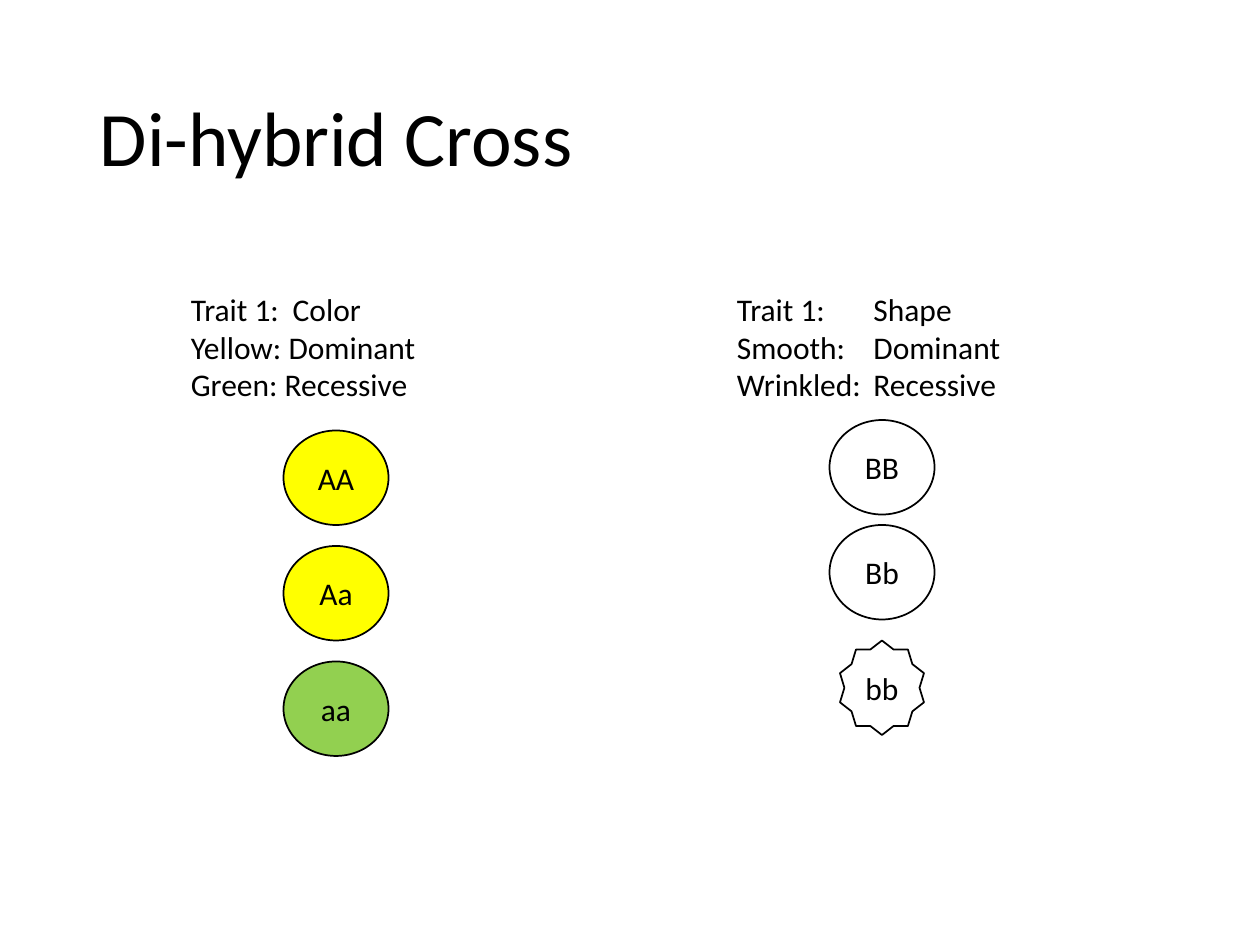
import dataclasses

import pptx
import pptx.dml.color
import pptx.enum.shapes
import pptx.enum.text
import pptx.oxml
import pptx.oxml.ns
import pptx.util

EMU_PER_PX = 7620
SHAPES = pptx.enum.shapes.MSO_SHAPE
ANCHOR = pptx.enum.text.MSO_ANCHOR
ALIGN = pptx.enum.text.PP_ALIGN


@dataclasses.dataclass(frozen=True)
class Theme:
    font: str = "Calibri"
    title_size: int = 44
    body_size: int = 18
    line_width: int = 1
    ink: str = "000000"
    white: str = "FFFFFF"
    yellow: str = "FFFF00"
    green: str = "92D050"


THEME = Theme()


def px(length):
    return pptx.util.Emu(length * EMU_PER_PX)


def rgb(value):
    return pptx.dml.color.RGBColor.from_string(value)


def add_run(paragraph, text, size):
    run = paragraph.add_run()
    run.text = text
    run.font.name = THEME.font
    run.font.size = pptx.util.Pt(size)
    run.font.color.rgb = rgb(THEME.ink)


def add_tab_stop(paragraph, position):
    properties = paragraph._p.get_or_add_pPr()
    tab_list = pptx.oxml.parse_xml(
        f'<a:tabLst {pptx.oxml.ns.nsdecls("a")}>'
        f'<a:tab pos="{px(position)}" algn="l"/></a:tabLst>'
    )
    properties.append(tab_list)


def set_title(slide, text):
    title = slide.shapes.title
    title.left, title.top = px(83), px(48)
    title.width, title.height = px(1034), px(174)
    frame = title.text_frame
    frame.word_wrap = True
    frame.vertical_anchor = ANCHOR.MIDDLE
    paragraph = frame.paragraphs[0]
    paragraph.alignment = ALIGN.LEFT
    paragraph.line_spacing = 0.9
    add_run(paragraph, text, THEME.title_size)


def add_trait(slide, left, lines, tab_position):
    box = slide.shapes.add_textbox(px(left), px(270), px(340), px(121))
    frame = box.text_frame
    frame.word_wrap = True
    frame.auto_size = pptx.enum.text.MSO_AUTO_SIZE.SHAPE_TO_FIT_TEXT
    for index, line in enumerate(lines):
        paragraph = frame.add_paragraph() if index else frame.paragraphs[0]
        add_run(paragraph, line, THEME.body_size)
        if "\t" in line:
            add_tab_stop(paragraph, tab_position)


def add_pea(slide, genotype, center, top, fill, kind=SHAPES.OVAL, width=100):
    pea = slide.shapes.add_shape(
        kind, px(center - width // 2), px(top), px(width), px(90)
    )
    pea.shadow.inherit = False
    if fill:
        pea.fill.solid()
        pea.fill.fore_color.rgb = rgb(fill)
    else:
        pea.fill.background()
    pea.line.color.rgb = rgb(THEME.ink)
    pea.line.width = pptx.util.Pt(THEME.line_width)
    frame = pea.text_frame
    frame.word_wrap = False
    frame.vertical_anchor = ANCHOR.MIDDLE
    paragraph = frame.paragraphs[0]
    paragraph.alignment = ALIGN.CENTER
    add_run(paragraph, genotype, THEME.body_size)


def main():
    presentation = pptx.Presentation()
    presentation.slide_width, presentation.slide_height = px(1200), px(900)
    slide = presentation.slides.add_slide(presentation.slide_layouts[5])
    set_title(slide, "Di-hybrid Cross")

    color_center, shape_center = 320, 840
    colors = [("AA", THEME.yellow), ("Aa", THEME.yellow), ("aa", THEME.green)]
    for row, (genotype, fill) in enumerate(colors):
        add_pea(slide, genotype, color_center, 410 + 110 * row, fill)
    for row, genotype in enumerate(["BB", "Bb"]):
        add_pea(slide, genotype, shape_center, 400 + 100 * row, THEME.white)
    add_pea(slide, "bb", shape_center, 610, None, SHAPES.STAR_10_POINT, 80)

    add_trait(
        slide,
        color_center - 150,
        ["Trait 1:\tColor", "Yellow: Dominant", "Green: Recessive"],
        97,
    )
    add_trait(
        slide,
        shape_center - 150,
        ["Trait 1:\tShape", "Smooth:\tDominant", "Wrinkled:\tRecessive"],
        130,
    )
    presentation.save("out.pptx")


if __name__ == "__main__":
    main()
